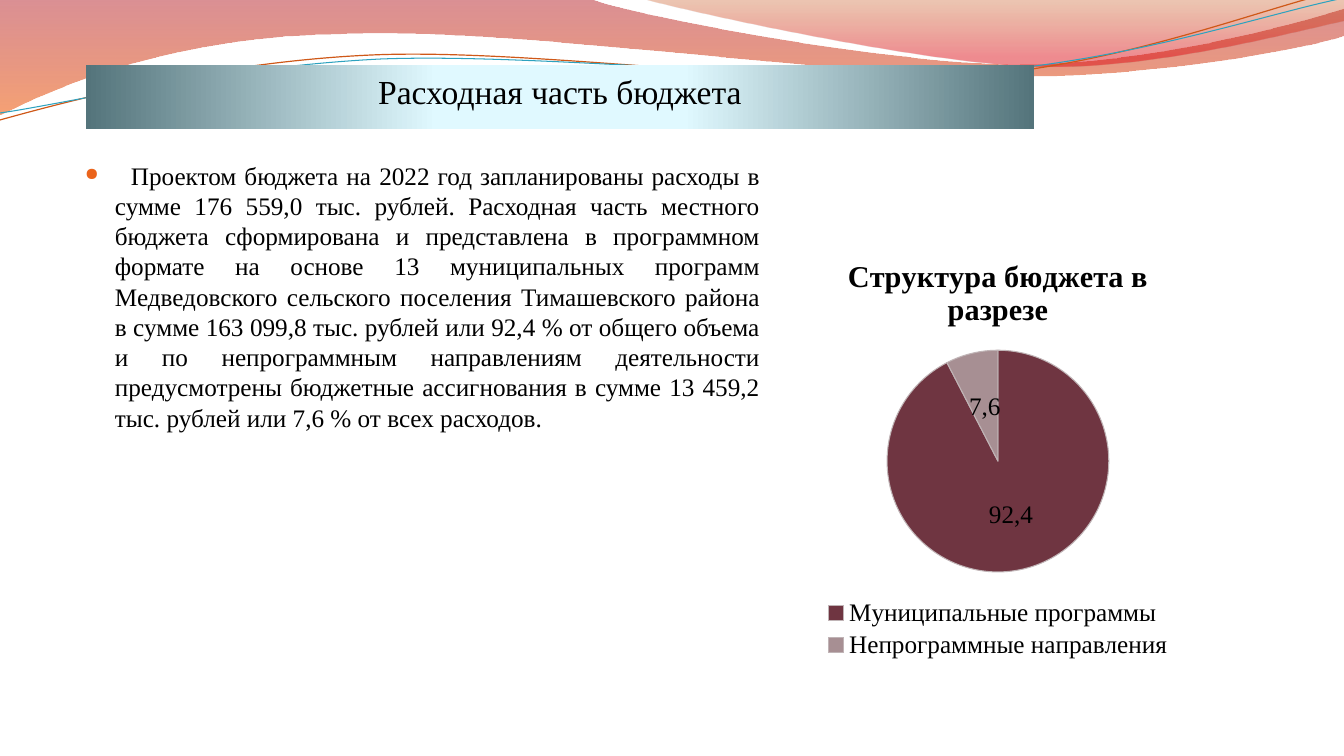
"""Build the slide on budget expenditure with a pie chart of its structure."""
from lxml import etree
from pptx import Presentation
from pptx.chart.data import CategoryChartData
from pptx.dml.color import RGBColor
from pptx.enum.chart import XL_CHART_TYPE, XL_LABEL_POSITION, XL_LEGEND_POSITION
from pptx.enum.shapes import MSO_SHAPE
from pptx.enum.text import MSO_ANCHOR, PP_ALIGN
from pptx.oxml import parse_xml
from pptx.oxml.ns import nsdecls, qn
from pptx.util import Pt

PX = 9525 / 1.05
FONT = "Times New Roman"
BLACK = RGBColor(0x00, 0x00, 0x00)
ORANGE = RGBColor(0xCF, 0x58, 0x18)
TEAL = RGBColor(0x2D, 0xA2, 0xBF)
BULLET = RGBColor(0xEB, 0x64, 0x1B)
MAROON = RGBColor(0x6F, 0x35, 0x41)
MAUVE = RGBColor(0xA7, 0x8F, 0x93)
EDGE = RGBColor(0xC0, 0xB4, 0xB6)
WINE = RGBColor(0xAF, 0x09, 0x11)
FLAME = RGBColor(0xEE, 0x53, 0x00)
RUST = RGBColor(0xC2, 0x44, 0x00)
RED = RGBColor(0xDC, 0x00, 0x0B)
ICE = RGBColor(0xE0, 0xF9, 0xFF)
SLATE = RGBColor(0x54, 0x74, 0x7B)
CENTER, JUSTIFY = PP_ALIGN.CENTER, PP_ALIGN.JUSTIFY
TOP, MIDDLE = MSO_ANCHOR.TOP, MSO_ANCHOR.MIDDLE
RECT = MSO_SHAPE.RECTANGLE
PIE = XL_CHART_TYPE.PIE
BOTTOM = XL_LEGEND_POSITION.BOTTOM
LABEL_CENTER = XL_LABEL_POSITION.CENTER


def emu(*lengths):
    return [round(n * PX) for n in lengths]


def set_text(tf, text, size=18, bold=False, align=CENTER, anchor=TOP, spacing=None):
    tf.word_wrap = True
    tf.vertical_anchor = anchor
    p = tf.paragraphs[0]
    p.alignment = align
    p.line_spacing = spacing
    r = p.add_run()
    r.text = text
    r.font.name, r.font.size, r.font.bold = FONT, Pt(size), bold
    r.font.color.rgb = BLACK
    return p


prs = Presentation()
prs.slide_width, prs.slide_height = emu(1344, 756)
s = prs.slides.add_slide(prs.slide_layouts[6])

waves = [
    ([(0, 0), (592, 0), (639, 17, 892, 64, 1019, 64), (1147, 64, 1288, 26, 1344, 9),
      (1344, 36), (1321, 44, 1169, 77, 1002, 76), (836, 76, 513, 28, 346, 34),
      (173, 36, 61, 84, 0, 114)], None, 0),
    ([(644, 0), (684, 11, 916, 62, 1033, 66), (1150, 70, 1292, 32, 1344, 21),
      (1344, 0)], None, 0),
    ([(0, 120), (65, 102, 213, 62, 372, 55), (531, 48, 796, 88, 958, 77),
      (1119, 67, 1262, 8, 1342, -10)], ORANGE, 0.85),
    ([(0, 113), (64, 104, 220, 67, 381, 59), (541, 53, 802, 83, 963, 73),
      (1124, 63, 1265, 14, 1344, -2)], TEAL, 0.75),
]
shapes = []
for segments, color, width in waves:
    points = [emu(*seg[i:i + 2]) for seg in segments for i in range(0, len(seg), 2)]
    fb = s.shapes.build_freeform(*points[0])
    fb.add_line_segments(points[1:], close=color is None)
    sp = fb.convert_to_shape()
    steps = iter(list(sp._element.iter(qn("a:lnTo"))))
    for seg in segments[1:]:
        step = next(steps)
        if len(seg) == 6:
            step.addprevious(curve := etree.Element(qn("a:cubicBezTo")))
            for part in (step, next(steps), next(steps)):
                curve.append(part[0])
                part.getparent().remove(part)
    sp.shadow.inherit = False
    if color is None:
        sp.line.fill.background()
    else:
        sp.fill.background()
        sp.line.color.rgb = color
        sp.line.width = Pt(width)
    shapes.append(sp)

title = s.shapes.add_shape(RECT, *emu(86, 65, 948, 64))
title.shadow.inherit = False
title.line.fill.background()
tf = title.text_frame
tf.margin_left = tf.margin_right = tf.margin_top = 0
tf.margin_bottom = emu(11)[0]
set_text(tf, "Расходная часть бюджета", size=24, anchor=MIDDLE)

gradients = [
    (shapes[0], 90, [(0, WINE, 45), (100, FLAME, 55)]),
    (shapes[1], 90, [(0, RUST, 30), (80, RED, 45), (100, RED, 45)]),
    (title, 0, [(0, SLATE, 100), (37, ICE, 100), (63, ICE, 100), (100, SLATE, 100)]),
]
for sp, angle, stops in gradients:
    sp.fill.gradient()
    sp.fill.gradient_angle = -angle % 360
    gs_list = sp.fill._fill._gradFill.find(qn("a:gsLst"))
    for gs in list(gs_list):
        gs_list.remove(gs)
    for pos, color, alpha in stops:
        gs_list.append(parse_xml(
            f'<a:gs {nsdecls("a")} pos="{pos * 1000}"><a:srgbClr val="{color}">'
            f'<a:alpha val="{alpha * 1000}"/></a:srgbClr></a:gs>'))

body = s.shapes.add_textbox(*emu(75, 155, 695, 579))
p = set_text(
    body.text_frame,
    "\tПроектом бюджета на 2022 год запланированы расходы в сумме 176 559,0 тыс. рублей. "
    "Расходная часть местного бюджета сформирована и представлена в программном формате "
    "на основе 13 муниципальных программ Медведовского сельского поселения Тимашевского "
    "района в сумме 163 099,8 тыс. рублей или 92,4 % от общего объема и по непрограммным "
    "направлениям деятельности предусмотрены бюджетные ассигнования в сумме 13 459,2 тыс. "
    "рублей или 7,6 % от всех расходов.", align=JUSTIFY, spacing=Pt(21.6))
pPr = p._p.get_or_add_pPr()
indent, tab = emu(30, 46)
pPr.set("marL", str(indent))
pPr.set("indent", str(-indent))
color = etree.SubElement(pPr, qn("a:buClr"))
etree.SubElement(color, qn("a:srgbClr"), val=str(BULLET))
etree.SubElement(pPr, qn("a:buSzPct"), val="70000")
etree.SubElement(pPr, qn("a:buChar"), char="●")
tabs = etree.SubElement(pPr, qn("a:tabLst"))
etree.SubElement(tabs, qn("a:tab"), pos=str(tab), algn="l")

data = CategoryChartData(number_format="0.0")
data.categories = ["Муниципальные программы", "Непрограммные направления"]
data.add_series("Структура бюджета в разрезе", (92.4, 7.6))
chart = s.shapes.add_chart(PIE, *emu(767, 237, 462, 427), data).chart
chart.font.name, chart.font.size = FONT, Pt(18)
chart.font.color.rgb = BLACK
chart.has_title = True
set_text(chart.chart_title.text_frame, "Структура бюджета в разрезе", size=21.6, bold=True)
chart.has_legend = True
chart.legend.position = BOTTOM
chart.legend.include_in_layout = False
plot = chart.plots[0]
plot.vary_by_categories = True
labels = plot.series[0].data_labels
labels.show_value = True
labels.number_format, labels.number_format_is_linked = "0.0", False
labels.position = LABEL_CENTER
for i, (color, label) in enumerate([(MAROON, "92,4"), (MAUVE, "7,6")]):
    point = plot.series[0].points[i]
    point.format.fill.solid()
    point.format.fill.fore_color.rgb = color
    point.format.line.color.rgb = EDGE
    point.format.line.width = Pt(0.75)
    set_text(point.data_label.text_frame, label)
    point.data_label.position = LABEL_CENTER
area = chart._chartSpace.chart.plotArea
for layout in area.findall(qn("c:layout")):
    area.remove(layout)
area.insert(0, parse_xml(
    f'<c:layout {nsdecls("c")}><c:manualLayout><c:layoutTarget val="inner"/>'
    '<c:xMode val="edge"/><c:yMode val="edge"/><c:x val="0.26"/><c:y val="0.26"/>'
    '<c:w val="0.48"/><c:h val="0.53"/></c:manualLayout></c:layout>'))

prs.save("out.pptx")
